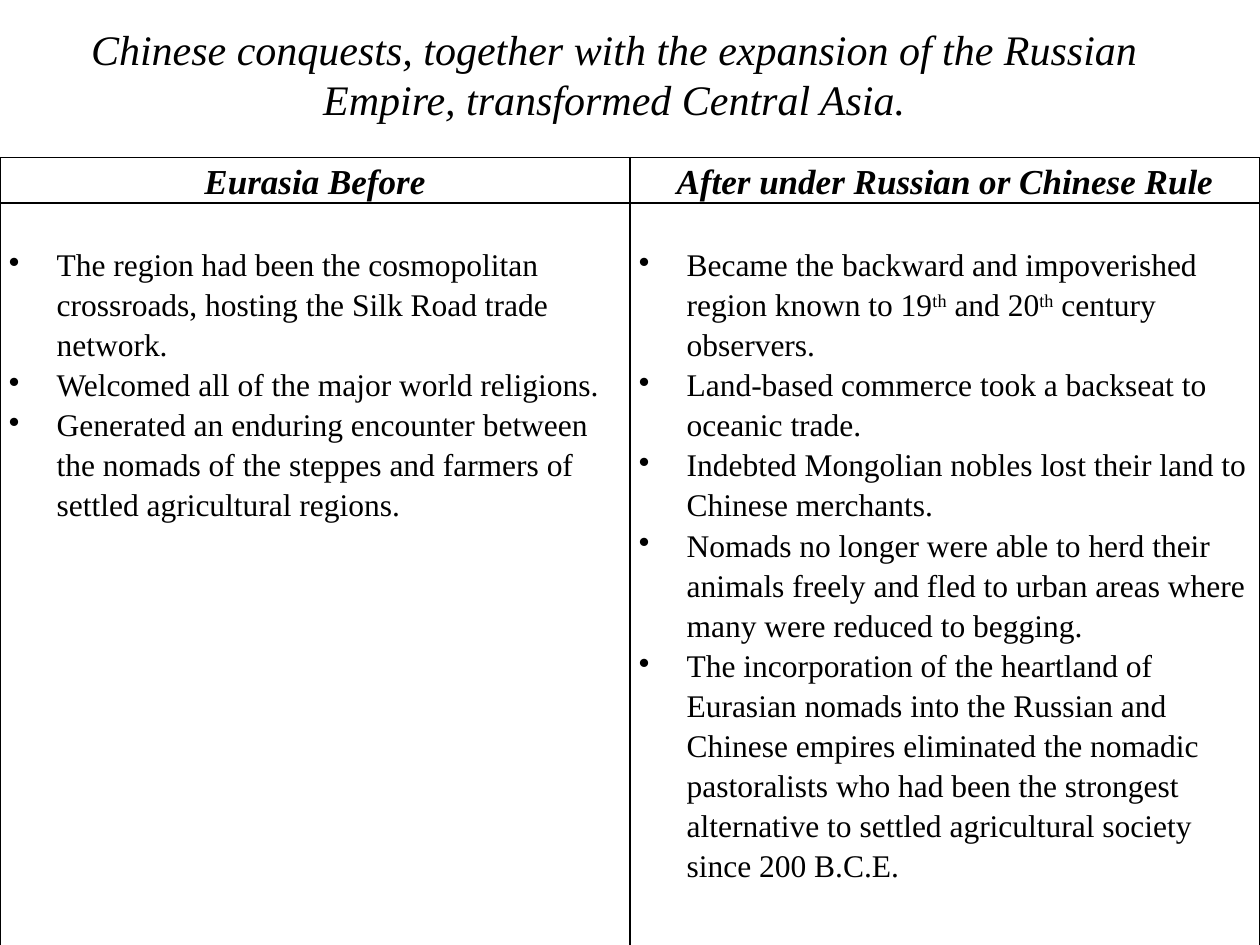
from dataclasses import dataclass

from lxml import etree
from pptx import Presentation
from pptx.dml.color import RGBColor
from pptx.enum.text import MSO_ANCHOR, PP_ALIGN
from pptx.oxml.ns import qn
from pptx.util import Inches, Pt


@dataclass
class Theme:
    font: str = "Times New Roman"
    ink: str = "000000"
    title_size: int = 24
    heading_size: int = 20
    body_size: int = 18
    border_width: int = 1
    line_spacing: float = 1.15


theme = Theme()

TITLE = ("Chinese conquests, together with the expansion of the Russian Empire, "
         "transformed Central Asia.")
# Text between carets is set as superscript
COLUMNS = {
    "Eurasia Before": [
        "The region had been the cosmopolitan crossroads, hosting the Silk Road trade network.",
        "Welcomed all of the major world religions.",
        "Generated an enduring encounter between the nomads of the steppes and farmers of "
        "settled agricultural regions.",
    ],
    "After under Russian or Chinese Rule": [
        "Became the backward and impoverished region known to 19^th^ and 20^th^ century observers.",
        "Land-based commerce took a backseat to oceanic trade.",
        "Indebted Mongolian nobles lost their land to Chinese merchants.",
        "Nomads no longer were able to herd their animals freely and fled to urban areas where "
        "many were reduced to begging.",
        "The incorporation of the heartland of Eurasian nomads into the Russian and Chinese "
        "empires eliminated the nomadic pastoralists who had been the strongest alternative to "
        "settled agricultural society since 200 B.C.E.",
    ],
}


def write(para, text, size, bold=False, italic=False):
    for index, part in enumerate(text.split("^")):
        span = para.add_run()
        span.text = part
        span.font.name = theme.font
        span.font.size = Pt(size)
        span.font.bold = bold
        span.font.italic = italic
        span.font.color.rgb = RGBColor.from_string(theme.ink)
        if index % 2:
            span.font._element.set("baseline", "30000")


def frame_cell(cell, top=0):
    cell.margin_left = cell.margin_right = Inches(0.07)
    cell.margin_top, cell.margin_bottom = Inches(top), 0
    properties = cell._tc.get_or_add_tcPr()
    for side in ("lnL", "lnR", "lnT", "lnB"):
        line = etree.SubElement(properties, qn(f"a:{side}"), w=str(Pt(theme.border_width)))
        fill = etree.SubElement(line, qn("a:solidFill"))
        etree.SubElement(fill, qn("a:srgbClr"), val=theme.ink)
    cell.fill.background()


deck = Presentation()
deck.slide_width, deck.slide_height = Inches(10), Inches(7.5)
page = deck.slides.add_slide(deck.slide_layouts[5])

# Title
title = page.shapes.title
title.left, title.top = Inches(0.25), Inches(0)
title.width, title.height = Inches(9.25), Inches(1.17)
title.text_frame.vertical_anchor = MSO_ANCHOR.MIDDLE
para = title.text_frame.paragraphs[0]
para.alignment = PP_ALIGN.CENTER
write(para, TITLE, theme.title_size, italic=True)

# Comparison table
table = page.shapes.add_table(2, len(COLUMNS), Inches(0), Inches(1.25),
                              Inches(10), Inches(6.29)).table
table.first_row = table.horz_banding = False
table.rows[0].height, table.rows[1].height = Inches(0.36), Inches(5.93)

for column, (heading, points) in enumerate(COLUMNS.items()):
    # Heading cell
    cell = table.cell(0, column)
    frame_cell(cell)
    para = cell.text_frame.paragraphs[0]
    para.alignment = PP_ALIGN.CENTER
    para.line_spacing = theme.line_spacing
    write(para, heading, theme.heading_size, bold=True, italic=True)

    # Bulleted cell
    cell = table.cell(1, column)
    frame_cell(cell, top=0.32)
    for index, point in enumerate(points):
        frame = cell.text_frame
        para = frame.add_paragraph() if index else frame.paragraphs[0]
        properties = para._p.get_or_add_pPr()
        properties.set("marL", str(Inches(0.38)))
        properties.set("indent", str(-Inches(0.38)))
        etree.SubElement(properties, qn("a:buChar"), char="•")
        para.line_spacing = theme.line_spacing
        write(para, point, theme.body_size)

deck.save("out.pptx")
